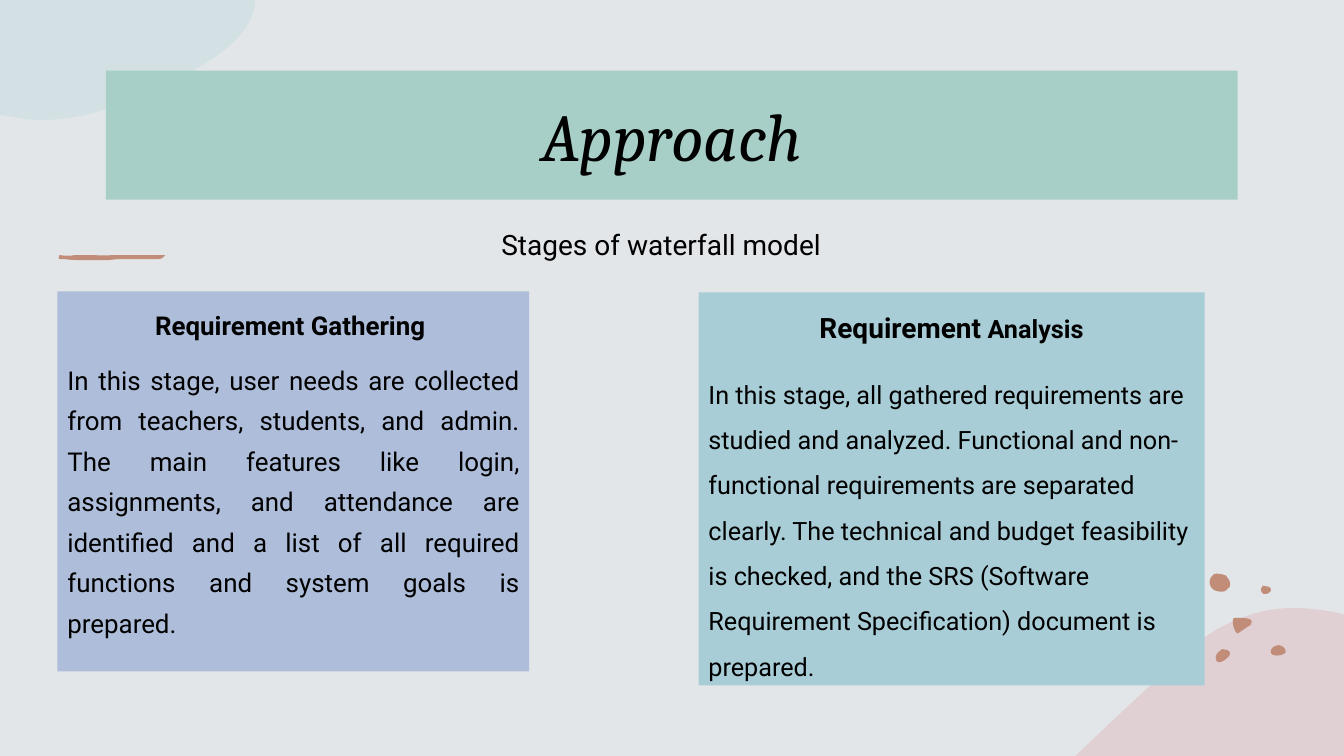
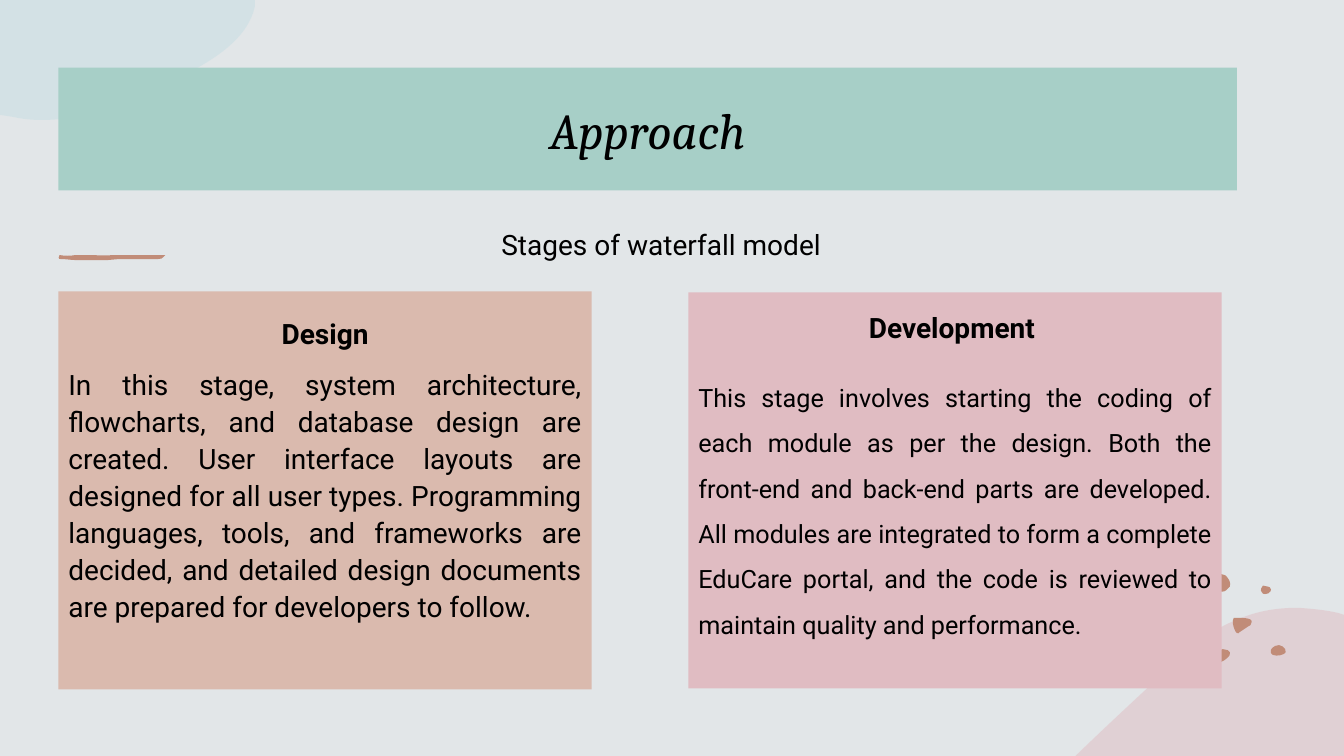
from dataclasses import dataclass

from lxml import etree
from pptx import Presentation
from pptx.dml.color import RGBColor
from pptx.enum.shapes import MSO_SHAPE
from pptx.enum.text import MSO_ANCHOR, PP_ALIGN
from pptx.oxml.ns import qn
from pptx.util import Inches, Pt

RECTANGLE = MSO_SHAPE.RECTANGLE
TOP, MIDDLE = MSO_ANCHOR.TOP, MSO_ANCHOR.MIDDLE
LEFT, CENTER, JUSTIFY = PP_ALIGN.LEFT, PP_ALIGN.CENTER, PP_ALIGN.JUSTIFY

# Shared style
BACKGROUND = RGBColor(0xE2, 0xE6, 0xE8)
BLACK = RGBColor(0x00, 0x00, 0x00)
MINT = RGBColor(0xA7, 0xCF, 0xC7)
PERIWINKLE = RGBColor(0xAE, 0xBE, 0xDA)
AQUA = RGBColor(0xA9, 0xCD, 0xD7)
SAND = RGBColor(0xDA, 0xBA, 0xAE)
ROSE = RGBColor(0xE0, 0xBC, 0xC2)
PALE_BLUE = RGBColor(0xC6, 0xDE, 0xE4)
CLAY = RGBColor(0xC1, 0x8C, 0x78)
TITLE_FONT, TEXT_FONT = "Cambria", "Roboto"

SLIDE_WIDTH, SLIDE_HEIGHT = 40 / 3, 7.5
SUBTITLE_BOX = (1.05, 2.21, 11.02, 0.44)

# Outlines in inches: a start point, then lines (2 numbers) or Bézier curves (6 numbers)
PINK_HILL = [
    (12.88, 6.03), (13.01, 6.04, 13.14, 6.05, 13.27, 6.08), (SLIDE_WIDTH, 6.1),
    (SLIDE_WIDTH, SLIDE_HEIGHT), (10.67, SLIDE_HEIGHT), (10.68, 7.49),
    (11.02, 7.16, 11.37, 6.84, 11.69, 6.54),
    (11.91, 6.32, 12.14, 6.19, 12.37, 6.11), (12.54, 6.05, 12.71, 6.03, 12.88, 6.03)]
BLUE_CLOUD = [
    (0, 0), (2.53, 0), (2.53, 0.06), (2.45, 0.44, 2, 0.67, 1.58, 0.86),
    (1.23, 1.03, 0.86, 1.19, 0.41, 1.19), (0.31, 1.19, 0.22, 1.18, 0.13, 1.16), (0, 1.14)]
BRUSH_STROKE = [
    (0.86, 2.58), (0.9, 2.58), (1.07, 2.58), (1.18, 2.57), (1.33, 2.57), (1.57, 2.57),
    (1.63, 2.57, 1.61, 2.54, 1.64, 2.53), (1.57, 2.53), (1.33, 2.53), (1.11, 2.53),
    (1.06, 2.54, 0.94, 2.53, 0.88, 2.53), (0.75, 2.53),
    (0.7, 2.54, 0.64, 2.54, 0.59, 2.53), (0.58, 2.54, 0.57, 2.58, 0.61, 2.57),
    (0.65, 2.57, 0.71, 2.58, 0.75, 2.58)]
PEBBLES = [
    [(12.13, 6.44), (12.15, 6.44, 12.16, 6.44, 12.18, 6.45),
     (12.2, 6.46, 12.21, 6.48, 12.2, 6.5), (12.18, 6.53, 12.12, 6.58, 12.08, 6.57),
     (12.07, 6.56, 12.06, 6.54, 12.06, 6.52), (12.06, 6.5, 12.08, 6.47, 12.1, 6.46),
     (12.11, 6.45, 12.12, 6.44, 12.13, 6.44)],
    [(12.69, 6.4), (12.71, 6.4, 12.74, 6.42, 12.75, 6.44),
     (12.76, 6.46, 12.76, 6.48, 12.73, 6.49), (12.7, 6.51, 12.62, 6.51, 12.61, 6.48),
     (12.6, 6.46, 12.61, 6.44, 12.62, 6.43), (12.64, 6.41, 12.66, 6.4, 12.69, 6.4)],
    [(12.01, 5.81), (12, 5.81, 11.99, 5.75, 12.02, 5.72),
     (12.04, 5.7, 12.04, 5.69, 12.07, 5.69), (12.1, 5.69, 12.14, 5.7, 12.16, 5.71),
     (12.18, 5.73, 12.22, 5.78, 12.2, 5.82), (12.17, 5.85, 12.16, 5.87, 12.12, 5.87),
     (12.09, 5.87, 12.04, 5.86, 12.03, 5.84), (12.01, 5.83, 12.01, 5.82, 12.01, 5.81)],
    [(12.51, 5.86), (12.51, 5.86, 12.51, 5.82, 12.53, 5.81),
     (12.55, 5.81, 12.56, 5.81, 12.58, 5.82), (12.59, 5.82, 12.61, 5.83, 12.61, 5.85),
     (12.61, 5.86, 12.6, 5.88, 12.59, 5.88), (12.59, 5.88, 12.59, 5.89, 12.57, 5.89),
     (12.56, 5.89, 12.54, 5.9, 12.53, 5.89), (12.52, 5.87, 12.51, 5.87, 12.51, 5.86)],
    [(12.28, 6.13), (12.34, 6.13, 12.45, 6.13, 12.41, 6.19),
     (12.41, 6.2, 12.4, 6.21, 12.39, 6.21), (12.36, 6.23, 12.33, 6.25, 12.3, 6.27),
     (12.29, 6.28, 12.28, 6.29, 12.27, 6.28), (12.26, 6.27),
     (12.24, 6.23, 12.23, 6.2, 12.23, 6.16), (12.23, 6.15, 12.23, 6.14, 12.24, 6.13)],
]


@dataclass
class Stage:
    box: tuple
    color: RGBColor
    heading: list  # (text, size, bold) runs
    body: str
    body_size: float
    alignment: PP_ALIGN
    line_spacing: float
    top_inset: float
    gap: float


def paint(shape, color, opacity=100):
    shape.shadow.inherit = False
    shape.line.fill.background()
    shape.fill.solid()
    shape.fill.fore_color.rgb = color
    if opacity < 100:
        color_element = shape.element.spPr.find(qn("a:solidFill"))[0]
        etree.SubElement(color_element, qn("a:alpha"), val=str(opacity * 1000))


def bend(shape, segments):
    """Turn the straight segments that stand for curves into Bézier curves."""
    lines = list(shape.element.iter(qn("a:lnTo")))
    for line, segment in zip(lines, segments):
        if len(segment) == 2:
            continue
        curve = etree.Element(qn("a:cubicBezTo"))
        for x, y in zip(segment[::2], segment[1::2]):
            etree.SubElement(curve, qn("a:pt"), x=str(Inches(x) - shape.left),
                             y=str(Inches(y) - shape.top))
        line.getparent().replace(line, curve)


def add_outline(slide, outline, color, opacity=100):
    start, *segments = outline
    builder = slide.shapes.build_freeform(*map(Inches, start))
    ends = [(Inches(segment[-2]), Inches(segment[-1])) for segment in segments]
    builder.add_line_segments(ends, close=True)
    shape = builder.convert_to_shape()
    bend(shape, segments)
    paint(shape, color, opacity)


def add_panel(slide, box, color, anchor):
    shape = slide.shapes.add_shape(RECTANGLE, *map(Inches, box))
    paint(shape, color)
    shape.text_frame.word_wrap = True
    shape.text_frame.vertical_anchor = anchor
    return shape.text_frame


def add_run(paragraph, text, size, font=TEXT_FONT, bold=False, italic=False):
    run = paragraph.add_run()
    run.text = text
    run.font.name, run.font.size = font, Pt(size)
    run.font.bold, run.font.italic = bold, italic
    run.font.color.rgb = BLACK


def add_decoration(slide):
    add_outline(slide, PINK_HILL, ROSE, 50)
    for pebble in PEBBLES:
        add_outline(slide, pebble, CLAY)
    add_outline(slide, BLUE_CLOUD, PALE_BLUE, 50)
    add_outline(slide, BRUSH_STROKE, CLAY)


def add_title(slide, box, size):
    paragraph = add_panel(slide, box, MINT, MIDDLE).paragraphs[0]
    paragraph.alignment = CENTER
    add_run(paragraph, "Approach", size, TITLE_FONT, italic=True)


def add_subtitle(slide, box):
    frame = slide.shapes.add_textbox(*map(Inches, box)).text_frame
    frame.word_wrap = True
    frame.paragraphs[0].alignment = CENTER
    add_run(frame.paragraphs[0], "Stages of waterfall model", 20)


def add_stage(slide, stage):
    frame = add_panel(slide, stage.box, stage.color, TOP)
    frame.margin_top = Pt(stage.top_inset)
    heading = frame.paragraphs[0]
    heading.alignment = CENTER
    for text, size, bold in stage.heading:
        add_run(heading, text, size, bold=bold)
    body = frame.add_paragraph()
    body.alignment = stage.alignment
    body.line_spacing = stage.line_spacing
    body.space_before = Pt(stage.gap)
    add_run(body, stage.body, stage.body_size)


def add_approach_slide(presentation, title_box, title_size, stages):
    slide = presentation.slides.add_slide(presentation.slide_layouts[6])
    add_decoration(slide)
    add_title(slide, title_box, title_size)
    add_subtitle(slide, SUBTITLE_BOX)
    for stage in stages:
        add_stage(slide, stage)


GATHERING = Stage(
    (0.57, 2.89, 4.68, 3.77), PERIWINKLE, [("Requirement Gathering ", 18.5, True)],
    "In this stage, user needs are collected from teachers, students, and admin. "
    "The main features like login, assignments, and attendance are identified and "
    "a list of all required functions and system goals is prepared.",
    18.5, JUSTIFY, 1.3, 13, 10.5)
ANALYSIS = Stage(
    (6.93, 2.9, 5.02, 3.9), AQUA, [("Requirement", 20, True), (" Analysis", 18, True)],
    "In this stage, all gathered requirements are studied and analyzed. Functional "
    "and non-functional requirements are separated clearly. The technical and budget "
    "feasibility is checked, and the SRS (Software Requirement Specification) "
    "document is prepared.",
    18, LEFT, 1.5, 13.2, 13.8)
DESIGN = Stage(
    (0.58, 2.89, 5.29, 3.95), SAND, [("Design", 20, True)],
    "In this stage, system architecture, flowcharts, and database design are created. "
    "User interface layouts are designed for all user types. Programming languages, "
    "tools, and frameworks are decided, and detailed design documents are prepared "
    "for developers to follow.",
    20, JUSTIFY, 1.1, 17.9, 10)
DEVELOPMENT = Stage(
    (6.83, 2.9, 5.29, 3.93), ROSE, [("Development", 20, True), (" ", 18, False)],
    "This stage involves starting the coding of each module as per the design. Both "
    "the front-end and back-end parts are developed. All modules are integrated to "
    "form a complete EduCare portal, and the code is reviewed to maintain quality "
    "and performance.",
    18, JUSTIFY, 1.5, 13.2, 16.2)


def main():
    presentation = Presentation()
    presentation.slide_width = Inches(SLIDE_WIDTH)
    presentation.slide_height = Inches(SLIDE_HEIGHT)
    background = presentation.slide_master.background.fill
    background.solid()
    background.fore_color.rgb = BACKGROUND

    add_approach_slide(presentation, (1.05, 0.7, 11.23, 1.28), 48, [GATHERING, ANALYSIS])
    add_approach_slide(presentation, (0.58, 0.67, 11.69, 1.22), 36, [DESIGN, DEVELOPMENT])
    presentation.save("out.pptx")


if __name__ == "__main__":
    main()
